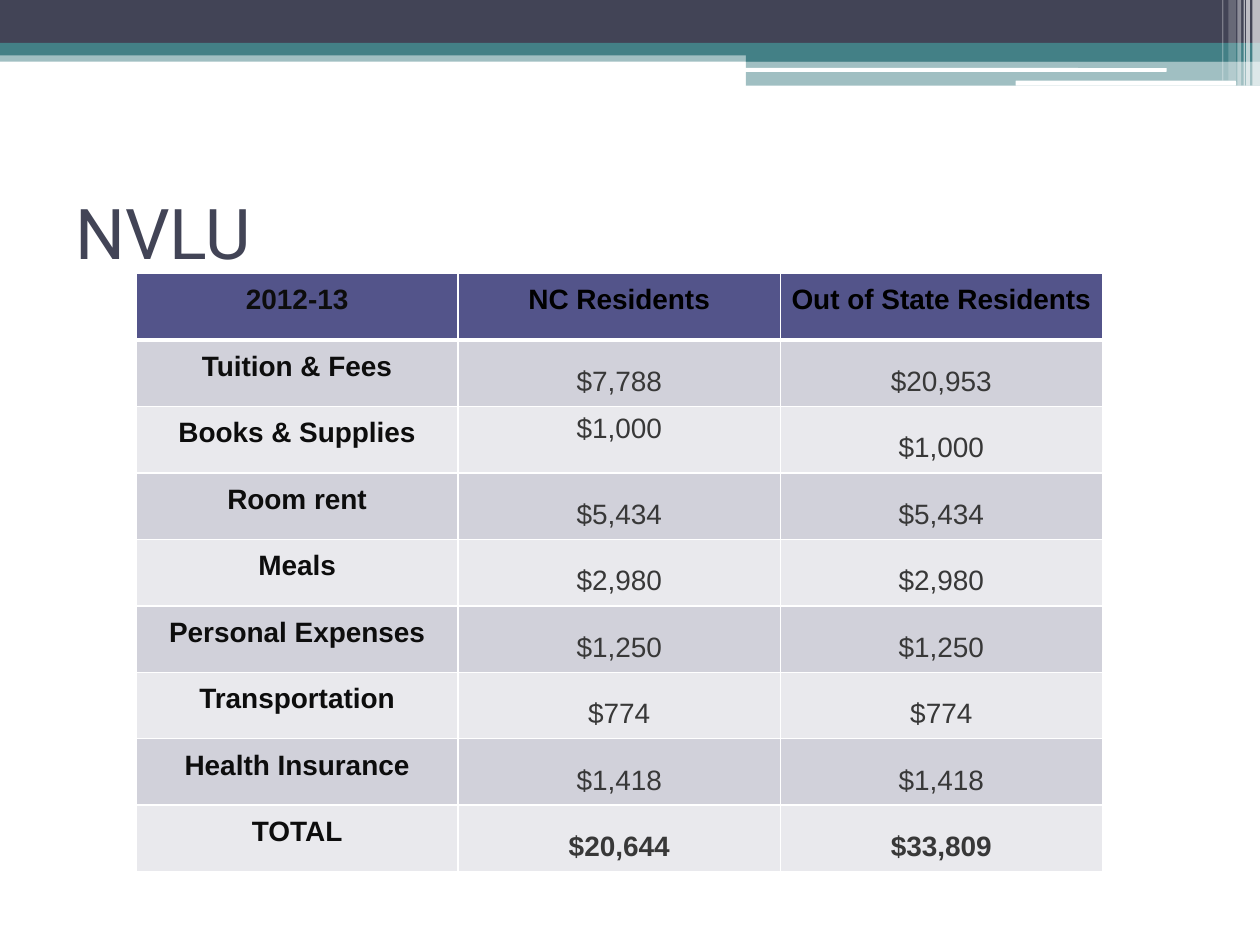
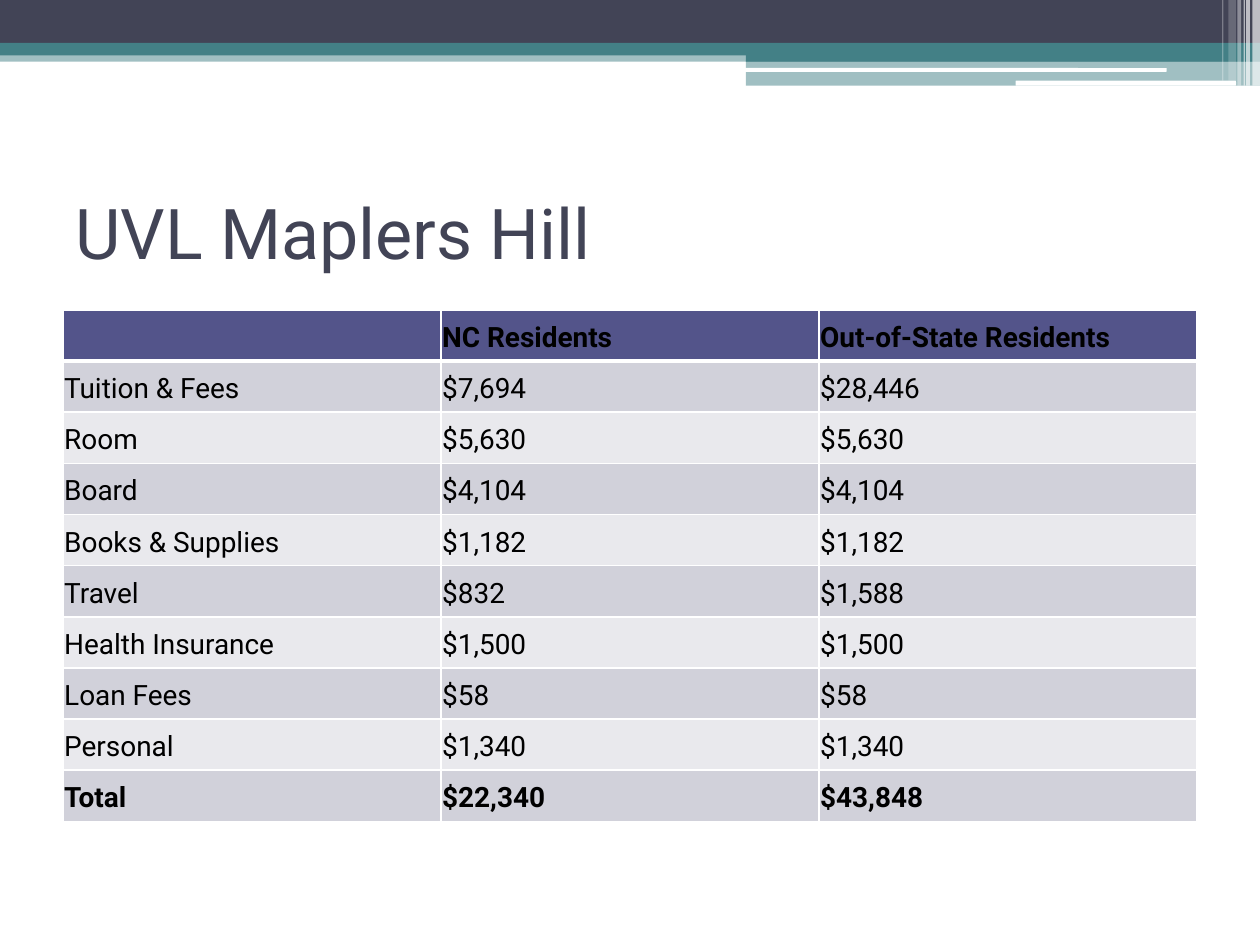
from lxml.etree import SubElement
from pptx import Presentation
from pptx.dml.color import RGBColor
from pptx.enum.shapes import MSO_SHAPE as SHAPE
from pptx.enum.text import MSO_ANCHOR as ANCHOR, PP_ALIGN as ALIGN
from pptx.oxml.ns import qn
from pptx.util import Inches, Pt

SLATE, TEAL, WHITE = "424456", "438086", "FFFFFF"
HEADER, BAND_DARK, BAND_LIGHT = "53548A", "D1D1DA", "E9E9ED"
BLACK, LABEL, AMOUNT = "000000", "0D0D0D", "383838"
HEADING_FONT = "Roboto"
TITLE_BOX = (0.5, 1.25, 9, 1.17)

# Top decoration: left, top, width, height, colour, opacity in percent
BARS = [
    (0, 0.4, 10, 0.09, TEAL, 50),
    (0, 0, 10, 0.34, SLATE, 100),
    (0, 0.34, 10, 0.1, TEAL, 100),
    (5.92, 0.39, 4.08, 0.1, TEAL, 100),
    (5.92, 0.48, 4.08, 0.2, TEAL, 50),
]
WHITE_RULES = [(5.91, 0.54, 3.35, 0.03), (8.06, 0.64, 1.75, 0.04)]
# Right-hand stripes: left, width, height, opacity in percent
STRIPES = [
    (9.94, 0.06, 0.68, 65),
    (9.89, 0.03, 0.68, 65),
    (9.87, 0.01, 0.68, 60),
    (9.82, 0.03, 0.68, 40),
    (9.75, 0.06, 0.64, 20),
    (9.7, 0.01, 0.64, 30),
]

NVLU_COSTS = [
    ("2012-13", "NC Residents", "Out of State Residents"),
    ("Tuition & Fees", "$7,788", "$20,953"),
    ("Books & Supplies", "$1,000", "$1,000"),
    ("Room rent", "$5,434", "$5,434"),
    ("Meals", "$2,980", "$2,980"),
    ("Personal Expenses", "$1,250", "$1,250"),
    ("Transportation", "$774", "$774"),
    ("Health Insurance", "$1,418", "$1,418"),
    ("TOTAL", "$20,644", "$33,809"),
]
MAPLE_COSTS = [
    ("", "NC Residents", "Out-of-State Residents"),
    ("Tuition & Fees", "$7,694", "$28,446"),
    ("Room", "$5,630", "$5,630"),
    ("Board", "$4,104", "$4,104"),
    ("Books & Supplies", "$1,182", "$1,182"),
    ("Travel", "$832", "$1,588"),
    ("Health Insurance", "$1,500", "$1,500"),
    ("Loan Fees", "$58", "$58"),
    ("Personal", "$1,340", "$1,340"),
    ("Total", "$22,340", "$43,848"),
]


def rgb(value):
    return RGBColor.from_string(value)


def add_bar(slide, box, color, opacity=100, kind=SHAPE.RECTANGLE):
    bar = slide.shapes.add_shape(kind, *map(Inches, box))
    bar.shadow.inherit = False
    bar.line.fill.background()
    bar.fill.solid()
    bar.fill.fore_color.rgb = rgb(color)
    if opacity < 100:
        srgb = bar.fill._xPr.find(".//" + qn("a:srgbClr"))
        SubElement(srgb, qn("a:alpha"), val=str(opacity * 1000))


def add_top_bands(slide):
    for *box, color, opacity in BARS:
        add_bar(slide, box, color, opacity)
    for box in WHITE_RULES:
        add_bar(slide, box, WHITE, kind=SHAPE.ROUNDED_RECTANGLE)
    for left, width, height, opacity in STRIPES:
        add_bar(slide, (left, 0, width, height), WHITE, opacity)


def add_run(paragraph, text, size, font, color, bold=False):
    run = paragraph.add_run()
    run.text = text
    run.font.size = Pt(size)
    run.font.name = font
    run.font.bold = bold
    run.font.color.rgb = rgb(color)


def add_title(slide, text):
    frame = slide.shapes.add_textbox(*map(Inches, TITLE_BOX)).text_frame
    frame.word_wrap = True
    frame.vertical_anchor = ANCHOR.MIDDLE
    add_run(frame.paragraphs[0], text, 40, HEADING_FONT, SLATE)


def set_borders(cell, row):
    """White grid, with a heavier rule between header and body."""
    widths = {"L": 1, "R": 1, "T": 3 if row == 1 else 1, "B": 3 if row == 0 else 1}
    tc_pr = cell._tc.get_or_add_tcPr()
    for side, width in widths.items():
        line = SubElement(tc_pr, qn(f"a:ln{side}"), w=str(Pt(width)))
        SubElement(SubElement(line, qn("a:solidFill")), qn("a:srgbClr"), val=WHITE)


def add_cost_table(slide, box, costs, style_cell):
    columns = len(costs[0])
    table = slide.shapes.add_table(len(costs), columns, *map(Inches, box)).table
    table.first_row = table.horz_banding = False
    for column in table.columns:
        column.width = Inches(box[2] / columns)
    for r, entries in enumerate(costs):
        table.rows[r].height = Inches(box[3] / len(costs))
        for c, text in enumerate(entries):
            cell = table.cell(r, c)
            set_borders(cell, r)
            cell.fill.solid()
            cell.fill.fore_color.rgb = rgb(
                HEADER if r == 0 else BAND_DARK if r % 2 else BAND_LIGHT)
            if text:
                cell.margin_left = cell.margin_right = Inches(0.01)
                cell.margin_top = cell.margin_bottom = Inches(0.01)
                cell.vertical_anchor = ANCHOR.MIDDLE
                style_cell(cell, text, r, c, r in (0, len(costs) - 1))


def style_nvlu_cell(cell, text, row, column, emphasized):
    paragraph = cell.text_frame.paragraphs[0]
    paragraph.alignment = ALIGN.CENTER
    paragraph.line_spacing = Pt(10.5)
    paragraph.space_after = Pt(11.2)
    color = LABEL
    if row == 0 and column:
        color = BLACK
        paragraph.space_after = Pt(10)
    elif column:
        # Amounts hang low in their row; in-state books sit higher
        color = AMOUNT
        cell.vertical_anchor = ANCHOR.TOP
        cell.margin_top = Inches(0.16 if (row, column) == (2, 1) else 0.31)
    add_run(paragraph, text, 16, "Arial", color, emphasized or column == 0)


def style_maple_cell(cell, text, row, column, emphasized):
    paragraph = cell.text_frame.paragraphs[0]
    paragraph.line_spacing = 1.15
    paragraph.space_after = Pt(3.8)
    add_run(paragraph, text, 16, HEADING_FONT, BLACK, emphasized)


def add_cost_slide(deck, title, box, costs, style_cell):
    slide = deck.slides.add_slide(deck.slide_layouts[6])
    add_top_bands(slide)
    add_title(slide, title)
    add_cost_table(slide, box, costs, style_cell)


def main():
    deck = Presentation()
    deck.slide_width, deck.slide_height = Inches(10), Inches(7.5)
    add_cost_slide(deck, "NVLU", (1.08, 2.17, 7.67, 4.75), NVLU_COSTS, style_nvlu_cell)
    add_cost_slide(deck, "UVL Maplers Hill", (0.5, 2.46, 9, 4.06), MAPLE_COSTS, style_maple_cell)
    deck.save("out.pptx")


if __name__ == "__main__":
    main()
